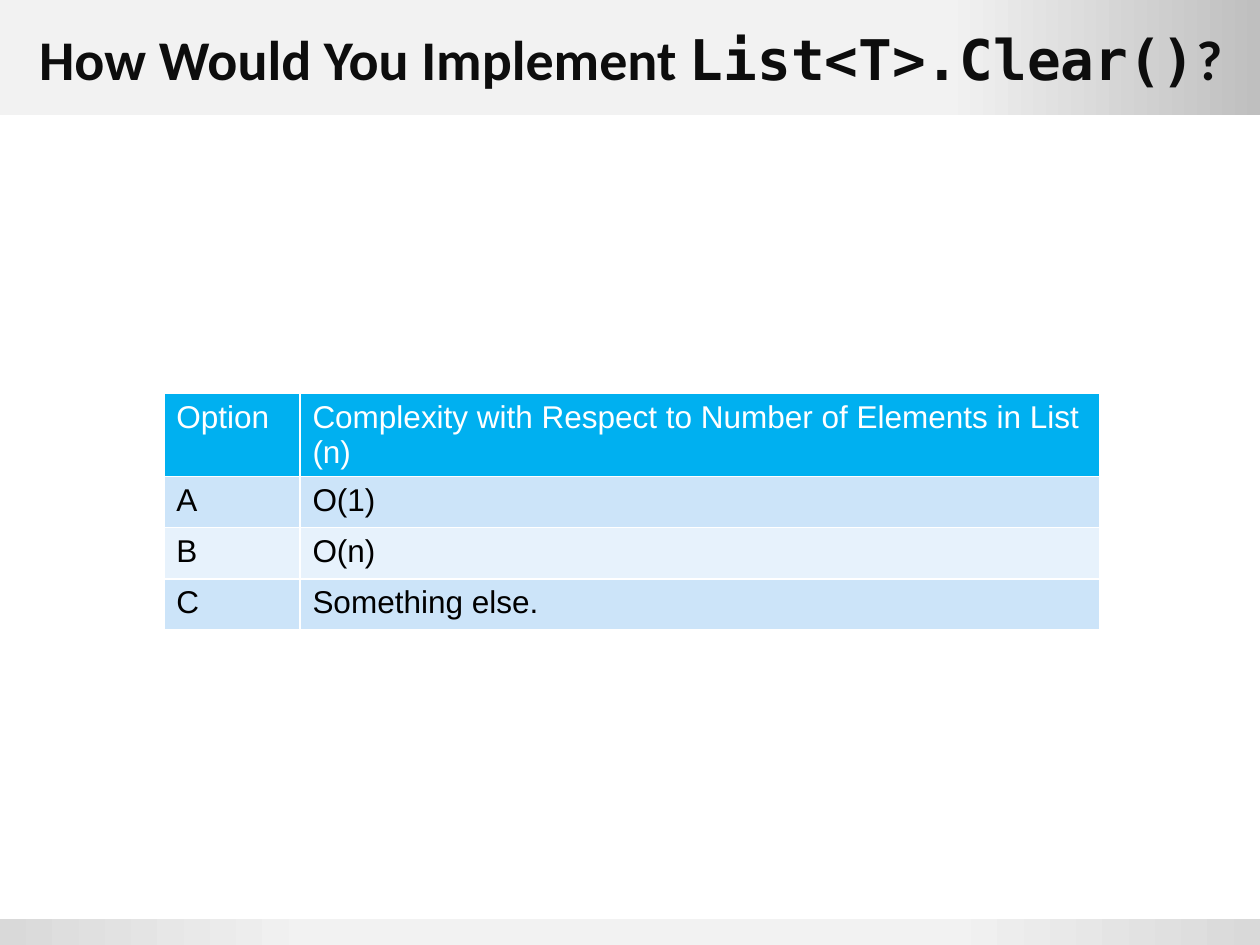
"""Build a quiz slide asking for the complexity of clearing a list."""
from dataclasses import dataclass

from pptx import Presentation
from pptx.dml.color import RGBColor
from pptx.enum.shapes import MSO_SHAPE as Preset
from pptx.enum.text import MSO_ANCHOR as Anchor, PP_ALIGN as Align
from pptx.oxml.ns import qn
from pptx.util import Pt
from lxml.etree import SubElement


@dataclass(frozen=True)
class Theme:
    ink: str = "0D0D0D"
    body: str = "000000"
    white: str = "FFFFFF"
    header: str = "00B0F0"
    stripes: tuple = ("CCE4F9", "E7F2FC")
    top_band: tuple = ((75, "F2F2F2"), (100, "BFBFBF"))
    bottom_band: tuple = ((0, "D9D9D9"), (25, "F2F2F2"), (75, "F2F2F2"), (100, "D9D9D9"))
    title_font: str = "Calibri"
    code_font: str = "DejaVu Sans Mono"
    table_font: str = "Arial"
    title_size: int = 32
    table_size: int = 18


THEME = Theme()
SLIDE_WIDTH, SLIDE_HEIGHT = 720, 540
TOP_HEIGHT, BOTTOM_HEIGHT = 66, 15
ROW_HEIGHT = 29.2
COLUMN_WIDTHS = (77.8, 457.2)
TITLE = (
    ("How Would You Implement ", THEME.title_font),
    ("List<T>.Clear()", THEME.code_font),
    ("?", THEME.title_font),
)
OPTIONS = (
    ("Option", "Complexity with Respect to Number of Elements in List (n)"),
    ("A", "O(1)"),
    ("B", "O(n)"),
    ("C", "Something else."),
)


def write(paragraph, text, *, font, size, color, bold=False):
    """Append a formatted run to a paragraph."""
    run = paragraph.add_run()
    run.text = text
    run.font.name, run.font.size, run.font.bold = font, Pt(size), bold
    run.font.color.rgb = RGBColor.from_string(color)


def add_band(slide, top, height, stops):
    """Add a full-width gradient band behind everything else."""
    band = slide.shapes.add_shape(Preset.RECTANGLE, 0, Pt(top), Pt(SLIDE_WIDTH), Pt(height))
    band.shadow.inherit = False
    band.line.fill.background()
    band.fill.gradient()
    band.fill.gradient_angle = 0
    stop_list = next(band._element.iter(qn("a:gsLst")))
    for default_stop in list(stop_list):
        stop_list.remove(default_stop)
    for position, color in stops:
        stop = SubElement(stop_list, qn("a:gs"), pos=str(position * 1000))
        SubElement(stop, qn("a:srgbClr"), val=color)
    slide.shapes._spTree.insert(2, band._element)


def set_title(slide):
    """Place the title in the top band, with its code in a fixed-width font."""
    title = slide.shapes.title
    title.left, title.top, title.width, title.height = Pt(14.4), 0, Pt(692), Pt(TOP_HEIGHT)
    title.text_frame.vertical_anchor = Anchor.MIDDLE
    heading = title.text_frame.paragraphs[0]
    heading.alignment = Align.CENTER
    for text, font in TITLE:
        write(heading, text, font=font, size=THEME.title_size, color=THEME.ink, bold=True)


def set_borders(cell, color, width):
    """Draw the same line on all four sides of a cell."""
    properties = cell._tc.get_or_add_tcPr()
    for index, side in enumerate(("lnL", "lnR", "lnT", "lnB")):
        border = properties.makeelement(qn(f"a:{side}"), {"w": str(Pt(width))})
        fill = SubElement(border, qn("a:solidFill"))
        SubElement(fill, qn("a:srgbClr"), val=color)
        properties.insert(index, border)


def add_options(slide):
    """Add the table of answers."""
    frame = slide.shapes.add_table(
        len(OPTIONS), len(COLUMN_WIDTHS), Pt(93.6), Pt(224.8),
        Pt(sum(COLUMN_WIDTHS)), Pt(ROW_HEIGHT * len(OPTIONS)))
    table = frame.table
    for column, width in zip(table.columns, COLUMN_WIDTHS):
        column.width = Pt(width)
    for row_index, answers in enumerate(OPTIONS):
        table.rows[row_index].height = Pt(ROW_HEIGHT)
        is_header = row_index == 0
        background = THEME.header if is_header else THEME.stripes[(row_index - 1) % 2]
        for column_index, answer in enumerate(answers):
            cell = table.cell(row_index, column_index)
            cell.fill.solid()
            cell.fill.fore_color.rgb = RGBColor.from_string(background)
            set_borders(cell, THEME.white, 1)
            write(cell.text_frame.paragraphs[0], answer, font=THEME.table_font,
                  size=THEME.table_size, color=THEME.white if is_header else THEME.body)


def main():
    """Build and save the slide."""
    deck = Presentation()
    deck.slide_width, deck.slide_height = Pt(SLIDE_WIDTH), Pt(SLIDE_HEIGHT)
    slide = deck.slides.add_slide(deck.slide_layouts[5])
    add_band(slide, SLIDE_HEIGHT - BOTTOM_HEIGHT, BOTTOM_HEIGHT, THEME.bottom_band)
    add_band(slide, 0, TOP_HEIGHT, THEME.top_band)
    set_title(slide)
    add_options(slide)
    deck.save("out.pptx")


if __name__ == "__main__":
    main()
